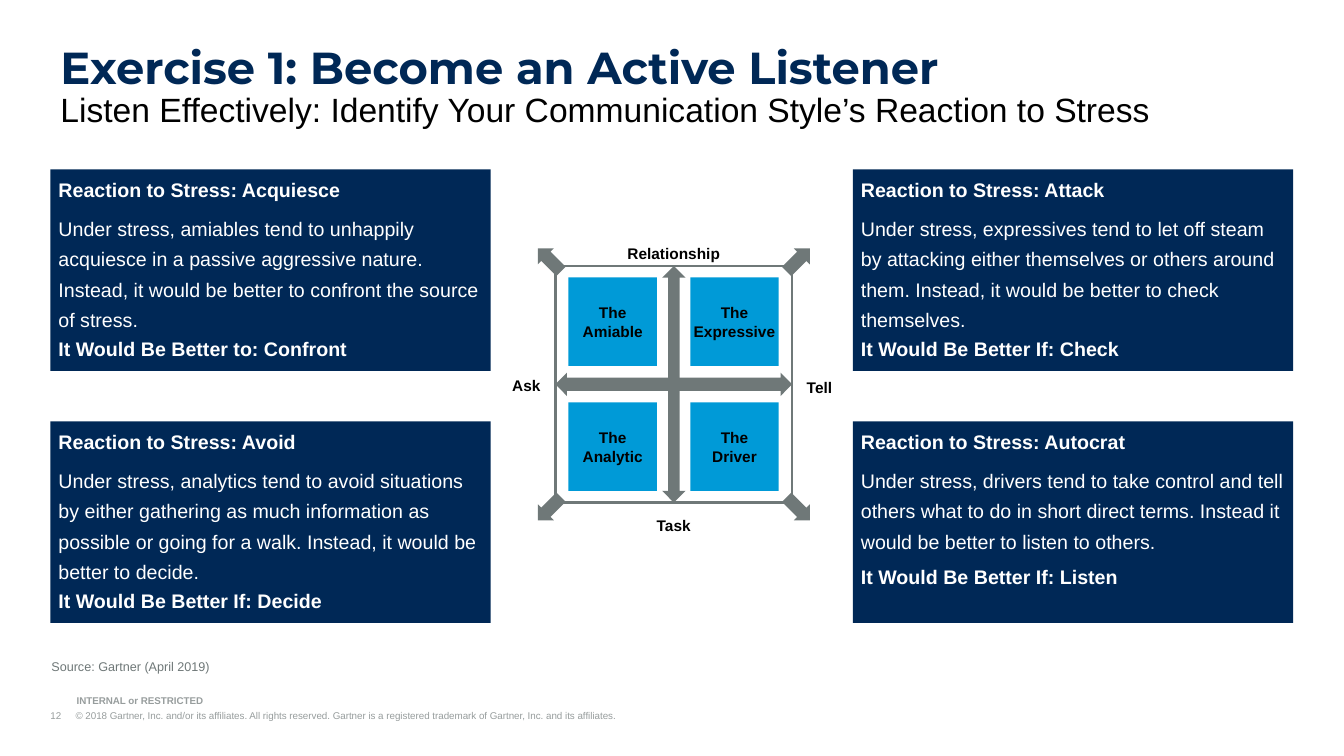
from lxml import etree
from pptx import Presentation
from pptx import util as u
from pptx.dml.color import RGBColor
from pptx.enum import shapes, text
from pptx.oxml.ns import qn

NAVY, BLUE, GREY, PALE = "002856", "009AD7", "6F7878", "979D9D"
BLACK, WHITE = "000000", "FFFFFF"


def color(value):
    return RGBColor.from_string(value)


def write(para, words, size, hue, bold=False, name="Arial"):
    span = para.add_run()
    span.text = words
    look = {"name": name, "size": u.Pt(size), "bold": bold}
    for key, value in look.items():
        setattr(span.font, key, value)
    span.font.color.rgb = color(hue)


deck = Presentation()
deck.slide_width, deck.slide_height = u.Pt(960), u.Pt(540)
page = deck.slides.add_slide(deck.slide_layouts[5])
items = page.shapes

# Title and subtitle
title = page.shapes.title
place = {"left": 36, "top": 28.8, "width": 888, "height": 34.6}
for key, value in place.items():
    setattr(title, key, u.Pt(value))
frame = title.text_frame
frame_format = {"word_wrap": True, "auto_size": text.MSO_AUTO_SIZE.NONE,
                "vertical_anchor": text.MSO_ANCHOR.TOP}
for key, value in frame_format.items():
    setattr(frame, key, value)
heading, subtitle = frame.paragraphs[0], frame.add_paragraph()
write(heading, "Exercise 1: Become an Active Listener", 32, NAVY, True, "Montserrat")
write(subtitle, "Listen Effectively: Identify Your Communication Style’s Reaction to Stress",
      24, BLACK)
for para in (heading, subtitle):
    para.alignment = text.PP_ALIGN.LEFT
    para.line_spacing = 0.9

# Double arrows along the two axes
LEFT, TOP, SIDE = 396.8, 190, 169
CENTER = LEFT + SIDE / 2
MIDDLE = TOP + SIDE / 2
THICK = 16.8
filled = []
for kind, x, y, width, height in [
    (shapes.MSO_SHAPE.UP_DOWN_ARROW, CENTER - THICK / 2, TOP, THICK, SIDE),
    (shapes.MSO_SHAPE.LEFT_RIGHT_ARROW, LEFT, MIDDLE - THICK / 2, SIDE, THICK),
]:
    axis = items.add_shape(kind, u.Pt(x), u.Pt(y), u.Pt(width), u.Pt(height))
    axis.adjustments[0], axis.adjustments[1] = 0.57, 0.49
    filled.append((axis, GREY))

# Style tiles
TILE = 63.2
for column, row, words, inset in [
    (0, 0, "The Amiable", 2), (1, 0, "The Expressive", 0),
    (0, 1, "The Analytic", 2), (1, 1, "The Driver", 8),
]:
    tile = items.add_shape(shapes.MSO_SHAPE.RECTANGLE, u.Pt(406.1 + 87 * column),
                           u.Pt(198.2 + 89.3 * row), u.Pt(TILE), u.Pt(TILE))
    frame = tile.text_frame
    frame.word_wrap = True
    frame.margin_left = frame.margin_right = u.Pt(inset)
    frame.vertical_anchor = text.MSO_ANCHOR.MIDDLE
    frame.paragraphs[0].alignment = text.PP_ALIGN.CENTER
    write(frame.paragraphs[0], words, 11, BLACK, True)
    filled.append((tile, BLUE))

# Square outline around the tiles
outline = items.add_shape(shapes.MSO_SHAPE.RECTANGLE, u.Pt(LEFT), u.Pt(TOP),
                          u.Pt(SIDE), u.Pt(SIDE))
outline.shadow.inherit = False
outline.fill.background()
outline.line.color.rgb = color(GREY)
outline.line.width = u.Pt(1.5)

# Corner arrows: offsets outward from each corner of the square
ARROW = [(12.6, 12.6), (12.6, 1.2), (10.2, 3.6), (-0.6, -7.2),
         (-7.2, -0.6), (3.6, 10.2), (1.2, 12.6)]
for x, across in ((LEFT, -1), (LEFT + SIDE, 1)):
    for y, down in ((TOP, -1), (TOP + SIDE, 1)):
        points = [(u.Pt(x + across * dx), u.Pt(y + down * dy)) for dx, dy in ARROW]
        builder = items.build_freeform(*points[0])
        builder.add_line_segments(points[1:])
        filled.append((builder.convert_to_shape(), GREY))

# Reaction panels
PANELS = [
    (36, 121, "Reaction to Stress: Acquiesce",
     "Under stress, amiables tend to unhappily acquiesce in a passive aggressive nature. "
     "Instead, it would be better to confront the source of stress.",
     "It Would Be Better to: Confront", 1.0),
    (36, 301, "Reaction to Stress: Avoid",
     "Under stress, analytics tend to avoid situations by either gathering as much "
     "information as possible or going for a walk. Instead, it would be better to decide.",
     "It Would Be Better If: Decide", 1.0),
    (609.2, 301, "Reaction to Stress: Autocrat",
     "Under stress, drivers tend to take control and tell others what to do in short "
     "direct terms. Instead it would be better to listen to others.",
     "It Would Be Better If: Listen", 1.3),
    (609.2, 121, "Reaction to Stress: Attack",
     "Under stress, expressives tend to let off steam by attacking either themselves or "
     "others around them. Instead, it would be better to check themselves.",
     "It Would Be Better If: Check", 1.0),
]
for x, y, reaction, advice, better, spacing in PANELS:
    panel = items.add_shape(shapes.MSO_SHAPE.RECTANGLE, u.Pt(x), u.Pt(y),
                            u.Pt(314.6), u.Pt(144))
    frame = panel.text_frame
    frame.word_wrap = True
    frame.vertical_anchor = text.MSO_ANCHOR.TOP
    for side in ("left", "top", "right", "bottom"):
        setattr(frame, "margin_" + side, u.Pt(5.76))
    first, second, third = frame.paragraphs[0], frame.add_paragraph(), frame.add_paragraph()
    for para, words, bold in ((first, reaction, True), (second, advice, False),
                              (third, better, True)):
        para.alignment = text.PP_ALIGN.LEFT
        write(para, words, 14, WHITE, bold)
    first.space_after = u.Pt(6)
    second.line_spacing = 1.3
    third.line_spacing = spacing
    third.space_before = u.Pt(3.6)
    filled.append((panel, NAVY))

for shape, hue in filled:
    shape.shadow.inherit = False
    shape.fill.solid()
    shape.fill.fore_color.rgb = color(hue)
    shape.line.fill.background()

# Axis labels, source and footer
CENTRED, START = text.PP_ALIGN.CENTER, text.PP_ALIGN.LEFT
UPPER, LOWER = text.MSO_ANCHOR.TOP, text.MSO_ANCHOR.BOTTOM
for x, y, width, height, words, size, hue, bold, align, anchor in [
    (CENTER - 36, 174.2, 72, 12, "Relationship", 11, BLACK, True, CENTRED, UPPER),
    (CENTER - 36, 368.6, 72, 12, "Task", 11, BLACK, True, CENTRED, UPPER),
    (361, 268.6, 30, 12, "Ask", 11, BLACK, True, CENTRED, UPPER),
    (570.4, 270, 30, 12, "Tell", 11, BLACK, True, CENTRED, UPPER),
    (36.7, 470.9, 716, 11, "Source: Gartner (April 2019)", 9, GREY, False, START, UPPER),
    (54.7, 496.1, 182, 8.6, "INTERNAL or RESTRICTED", 7, PALE, True, START, LOWER),
    (36, 506.9, 575, 8.6, "12\t© 2018 Gartner, Inc. and/or its affiliates. All rights reserved."
     " Gartner is a registered trademark of Gartner, Inc. and its affiliates.",
     7, PALE, False, START, LOWER),
]:
    box = items.add_textbox(u.Pt(x), u.Pt(y), u.Pt(width), u.Pt(height))
    frame = box.text_frame
    frame.word_wrap = True
    frame.vertical_anchor = anchor
    for side in ("left", "top", "right", "bottom"):
        setattr(frame, "margin_" + side, 0)
    para = frame.paragraphs[0]
    para.alignment = align
    if "\t" in words:
        props = para._p.get_or_add_pPr()
        props.set("marL", str(u.Pt(18)))
        props.set("indent", str(-u.Pt(18)))
        stops = etree.SubElement(props, qn("a:tabLst"))
        etree.SubElement(stops, qn("a:tab"), pos=str(u.Pt(18)), algn="l")
    write(para, words, size, hue, bold)

deck.save("out.pptx")
